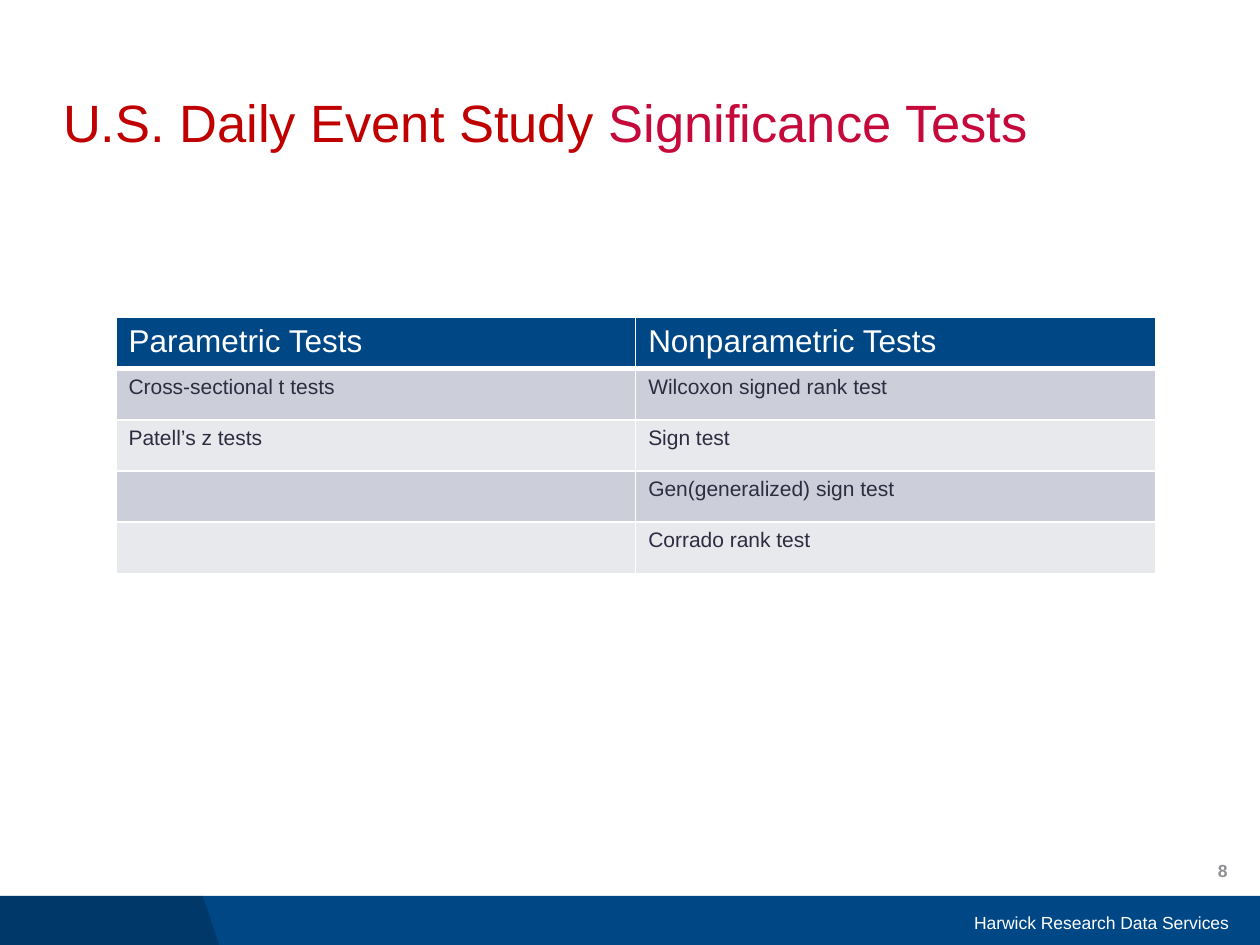
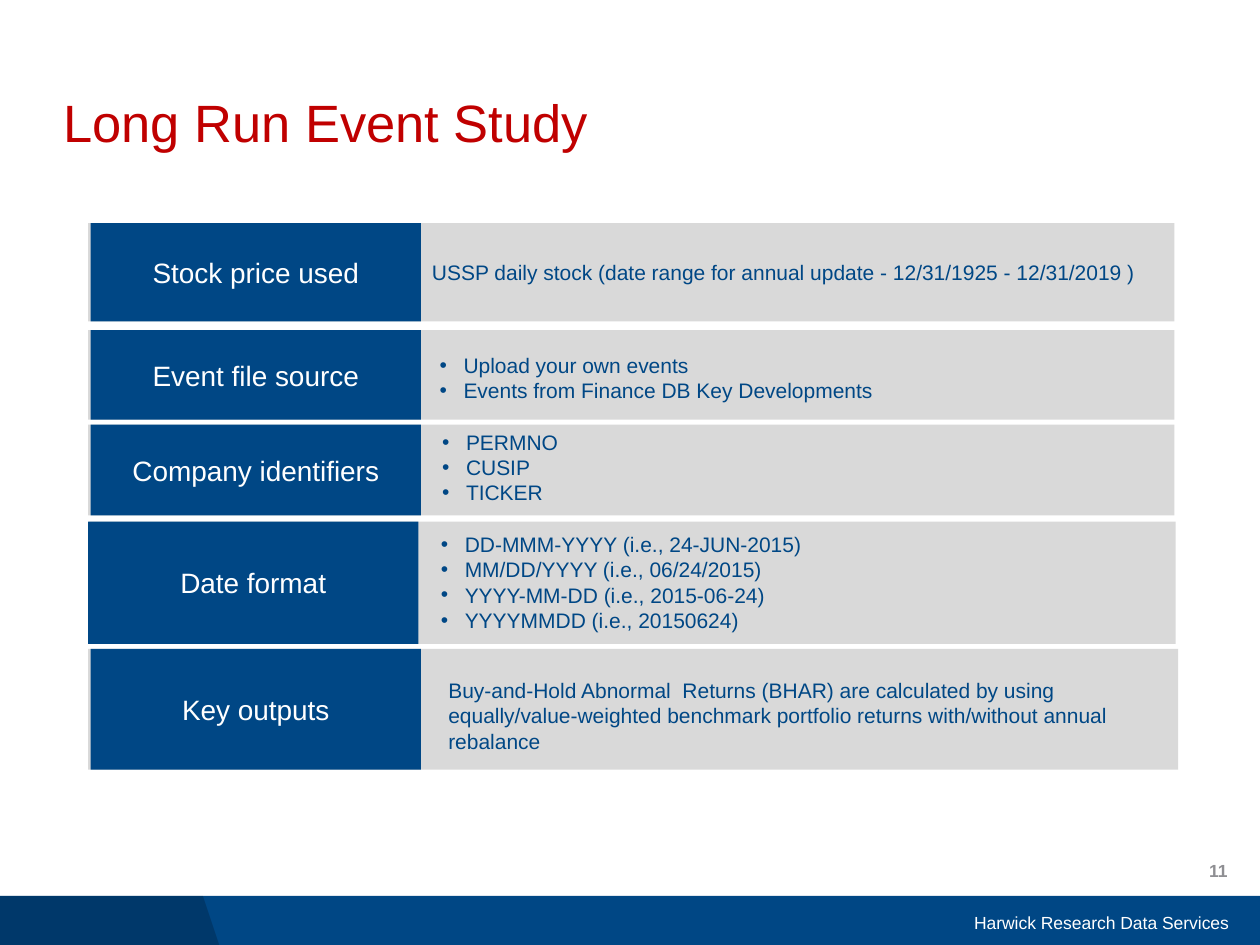
from dataclasses import dataclass

from lxml import etree
from pptx import Presentation
from pptx.dml.color import RGBColor
from pptx.enum import shapes, text
from pptx.oxml import ns
from pptx.util import Inches, Pt


@dataclass(frozen=True)
class Theme:
    font: str = "Arial"
    navy: str = "004785"
    black: str = "000000"
    white: str = "FFFFFF"
    grey: str = "D9D9D9"
    page: str = "8F8F93"
    red: str = "C00000"
    rose: str = "C5093B"
    ink: str = "2D2C41"
    bands: tuple = ("CCCFD9", "E7E9ED")
    title: int = 30
    head: int = 18
    label: int = 16
    body: int = 12
    foot: int = 10


T = Theme()
LEFT, MID, RIGHT = text.PP_ALIGN.LEFT, text.PP_ALIGN.CENTER, text.PP_ALIGN.RIGHT
INDENT = 0.19
SPLIT = 2.62

TESTS = (
    ("Parametric Tests", "Nonparametric Tests"),
    ("Cross-sectional t tests", "Wilcoxon signed rank test"),
    ("Patell’s z tests", "Sign test"),
    ("", "Gen(generalized) sign test"),
    ("", "Corrado rank test"),
)


@dataclass(frozen=True)
class Row:
    box: tuple
    label: str
    lines: tuple
    note: tuple
    shift: float = 0.02
    dots: bool = True


ROWS = (
    Row((0.7, 1.77, 8.62, 0.78), "Stock price used",
        ("USSP daily stock (date range for annual update - 12/31/1925 - 12/31/2019\u00a0)",),
        (2.63, 0.24, 5.93, 0.3), dots=False),
    Row((0.7, 2.62, 8.62, 0.71), "Event file source",
        ("Upload your own events", "Events from Finance DB Key Developments"),
        (2.69, 0.13, 5.91, 0.5)),
    Row((0.7, 3.37, 8.62, 0.72), "Company identifiers",
        ("PERMNO", "CUSIP", "TICKER"),
        (2.71, -0.01, 5.91, 0.78)),
    Row((0.71, 4.14, 8.62, 0.97), "Date format",
        ("DD-MMM-YYYY (i.e., 24-JUN-2015)", "MM/DD/YYYY (i.e., 06/24/2015)",
         "YYYY-MM-DD (i.e., 2015-06-24)", "YYYYMMDD (i.e., 20150624)"),
        (2.69, 0.03, 5.91, 0.92), shift=-0.01),
    Row((0.7, 5.15, 8.65, 0.96), "Key outputs",
        ("Buy-and-Hold Abnormal  Returns (BHAR) are calculated by using "
         "equally/value-weighted benchmark portfolio returns with/without annual rebalance",),
        (2.76, 0.18, 5.93, 0.71), dots=False),
)


def rgb(tone):
    return RGBColor.from_string(tone)


def add_run(para, words, size, tone, bold=False):
    run = para.add_run()
    run.text = words
    font = run.font
    font.name, font.size, font.bold = T.font, Pt(size), bold
    font.color.rgb = rgb(tone)


def paint(shape, tone):
    shape.shadow.inherit = False
    shape.fill.solid()
    shape.fill.fore_color.rgb = rgb(tone)
    shape.line.fill.background()


def add_rect(pool, box, tone):
    rect = pool.add_shape(shapes.MSO_SHAPE.RECTANGLE, *map(Inches, box))
    paint(rect, tone)
    return rect


def add_text(pool, box, anchor=text.MSO_ANCHOR.TOP):
    frame = pool.add_textbox(*map(Inches, box)).text_frame
    frame.word_wrap = True
    frame.vertical_anchor = anchor
    return frame


def add_dot(para):
    props = para._p.get_or_add_pPr()
    props.set("marL", str(Inches(INDENT)))
    props.set("indent", str(Inches(-INDENT)))
    etree.SubElement(props, ns.qn("a:buFont")).set("typeface", T.font)
    etree.SubElement(props, ns.qn("a:buChar")).set("char", "•")


def add_title(pool, box, parts):
    frame = add_text(pool, box)
    frame.margin_left = frame.margin_right = 0
    para = frame.paragraphs[0]
    para.line_spacing = 0.9
    for words, tone in parts:
        add_run(para, words, T.title, tone)


def add_foot(pool, box, page):
    left, top, width, height = box
    add_rect(pool, box, T.navy)
    pen = pool.build_freeform(Inches(left), Inches(top))
    pen.add_line_segments([(Inches(left + x), Inches(top + y)) for x, y in
                           ((1.61, 0), (1.74, height), (0, height))])
    wedge = pen.convert_to_shape()
    paint(wedge, T.black)
    shade = wedge._element.spPr.find(".//" + ns.qn("a:srgbClr"))
    etree.SubElement(shade, ns.qn("a:alpha")).set("val", "20000")
    for words, x, y, wide, tone, bold in (
            ("Harwick Research Data Services", 6.47, 0.01, 3.38, T.white, False),
            (str(page), 7.59, -0.4, 2.25, T.page, True)):
        frame = add_text(pool, (left + x, top + y, wide, 0.4), text.MSO_ANCHOR.MIDDLE)
        para = frame.paragraphs[0]
        para.alignment = RIGHT
        add_run(para, words, T.foot, tone, bold)


def add_edge(cell, side, width):
    edge = etree.SubElement(cell._tc.get_or_add_tcPr(), ns.qn("a:ln" + side))
    edge.set("w", str(Pt(width)))
    fill = etree.SubElement(edge, ns.qn("a:solidFill"))
    etree.SubElement(fill, ns.qn("a:srgbClr")).set("val", T.white)


def add_grid(pool, box, data):
    grid = pool.add_table(len(data), len(data[0]), *map(Inches, box)).table
    grid.first_row = grid.horz_banding = False
    for r, line in enumerate(data):
        grid.rows[r].height = Inches(box[3] / len(data))
        head = r == 0
        size, tone = (T.head, T.white) if head else (T.body, T.ink)
        for c, words in enumerate(line):
            cell = grid.cell(r, c)
            for side in "LRTB":
                thick = (r, side) in ((0, "B"), (1, "T"))
                add_edge(cell, side, 3 if thick else 1)
            cell.fill.solid()
            cell.fill.fore_color.rgb = rgb(T.navy if head else T.bands[(r - 1) % 2])
            if words:
                add_run(cell.text_frame.paragraphs[0], words, size, tone)


def add_row(pool, row):
    left, top, width, height = row.box
    group = pool.add_group_shape().shapes
    add_rect(group, row.box, T.grey)
    tag = add_rect(group, (left + row.shift, top, SPLIT, height), T.navy).text_frame
    tag.word_wrap = True
    tag.vertical_anchor = text.MSO_ANCHOR.MIDDLE
    tag.paragraphs[0].alignment = MID
    add_run(tag.paragraphs[0], row.label, T.label, T.white)
    x, y, wide, high = row.note
    frame = add_text(group, (left + x, top + y, wide, high))
    for i, line in enumerate(row.lines):
        para = frame.add_paragraph() if i else frame.paragraphs[0]
        para.alignment = LEFT
        if row.dots:
            add_dot(para)
        add_run(para, line, T.body, T.navy)


def add_slide(deck, page, parts):
    pool = deck.slides.add_slide(deck.slide_layouts[6]).shapes
    add_foot(pool, (0, 7.11, 10, 0.39), page)
    add_title(pool, (0.5, 0.72, 8.62, 0.56), parts)
    return pool


def main():
    deck = Presentation()
    deck.slide_width, deck.slide_height = Inches(10), Inches(7.5)
    pool = add_slide(deck, 8, (("U.S. Daily Event Study ", T.red),
                               ("Significance Tests", T.rose)))
    add_grid(pool, (0.92, 2.52, 8.25, 2.03), TESTS)
    pool = add_slide(deck, 11, (("Long Run Event Study", T.red),))
    for row in ROWS:
        add_row(pool, row)
    deck.save("out.pptx")


if __name__ == "__main__":
    main()
